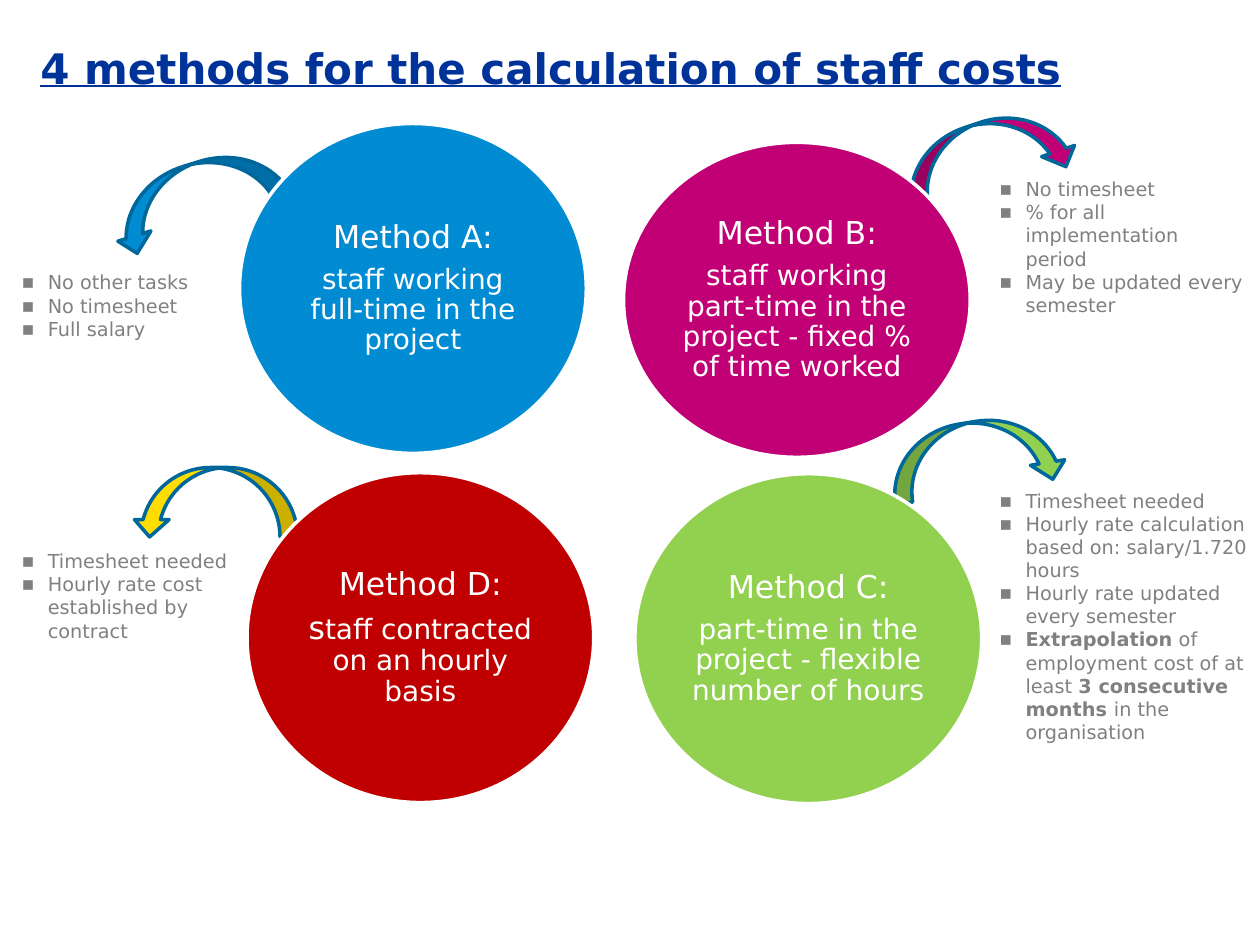
from dataclasses import dataclass

from lxml.etree import SubElement
from pptx import Presentation
from pptx.dml.color import RGBColor as Color
from pptx.enum.shapes import MSO_SHAPE as Shape
from pptx.enum.text import MSO_ANCHOR as Anchor, MSO_AUTO_SIZE as Fit, PP_ALIGN as Align
from pptx.oxml.ns import qn
from pptx.util import Cm, Pt

Box = tuple[float, float, float, float]  # left, top, width, height in cm
Run = tuple[str, bool]                   # text, bold


@dataclass(frozen=True)
class Theme:
    font: str = "DejaVu Sans"
    navy: str = "003399"
    edge: str = "00679B"
    white: str = "FFFFFF"
    grey: str = "808080"
    blue: str = "008BD2"
    pink: str = "C10076"
    green: str = "92D050"
    red: str = "C00000"
    yellow: str = "FFDD00"
    title: int = 24
    head: int = 18
    text: int = 16
    note: int = 11
    line: int = 2


@dataclass(frozen=True)
class Arrow:
    box: Box
    turn: float
    fill: str
    flip: str = ""


@dataclass(frozen=True)
class Method:
    name: str
    text: str
    fill: str
    disc: Box
    arrow: Arrow
    notes: Box
    items: list[list[Run]]
    big: int = 0  # leading letters of the text set in the heading size


T = Theme()
WIDE, TALL = 6.99, 6.65  # disc size
BAND = 1.4               # arrow width
LEFT, RIGHT = 0.18, 19.89  # note columns
INDENT = Cm(0.53)


def plain(*lines: str) -> list[list[Run]]:
    return [[(line, False)] for line in lines]


METHODS = [
    Method("Method A:", "staff working full-time in the project", T.blue,
           (4.83, 2.49, WIDE, TALL),
           Arrow((3.28, 2.16, BAND, 3.68), 72.8, T.blue),
           (LEFT, 5.33, 4.93, 1.68),
           plain("No other tasks", "No timesheet", "Full salary")),
    Method("Method B:", "staff working part-time in the project - fixed % of time worked",
           T.pink, (12.57, 2.87, WIDE, 6.35),
           Arrow((19.2, 1.37, BAND, 3.58), 251.3, T.pink, "flipH"),
           (RIGHT, 3.45, 5.46, 3.07),
           plain("No timesheet", "% for all implementation period",
                 "May be updated every semester")),
    Method("Method D:", "staff contracted on an hourly basis", T.red,
           (4.98, 9.53, WIDE, TALL),
           Arrow((3.63, 8.46, BAND, 3.33), 90, T.yellow),
           (LEFT, 10.95, 4.93, 2.13),
           plain("Timesheet needed", "Hourly rate cost established by contract"),
           big=1),
    Method("Method C:", "part-time in the project - flexible number of hours", T.green,
           (12.8, 9.55, WIDE, TALL),
           Arrow((19, 7.42, BAND, 3.56), 80.8, T.green, "flipV"),
           (RIGHT, 9.73, 5.56, 5.89),
           plain("Timesheet needed",
                 "Hourly rate calculation based on: salary/1.720 hours",
                 "Hourly rate updated every semester")
           + [[("Extrapolation", True), (" of employment cost of at least ", False),
               ("3 consecutive months ", True), ("in the organisation", False)]]),
]


def style(font, size: int, color: str, bold: bool = False) -> None:
    font.name, font.size, font.bold = T.font, Pt(size), bold
    font.color.rgb = Color.from_string(color)


def place(holder, box: Box, anchor: Anchor) -> None:
    holder.left, holder.top, holder.width, holder.height = map(Cm, box)
    frame = holder.text_frame
    frame.word_wrap, frame.auto_size = True, Fit.NONE
    frame.vertical_anchor = anchor


def add_shape(slide, kind: Shape, box: Box, fill: str, line: str):
    shape = slide.shapes.add_shape(kind, *map(Cm, box))
    shape.shadow.inherit = False
    shape.fill.solid()
    shape.fill.fore_color.rgb = Color.from_string(fill)
    shape.line.color.rgb = Color.from_string(line)
    shape.line.width = Pt(T.line)
    return shape


def add_arrow(slide, arrow: Arrow) -> None:
    shape = add_shape(slide, Shape.CURVED_RIGHT_ARROW, arrow.box, arrow.fill, T.edge)
    shape.rotation = arrow.turn
    if arrow.flip:
        shape.element.spPr.find(qn("a:xfrm")).set(arrow.flip, "1")


def add_disc(slide, method: Method) -> None:
    frame = add_shape(slide, Shape.OVAL, method.disc, method.fill, T.white).text_frame
    frame.word_wrap, frame.vertical_anchor = True, Anchor.MIDDLE
    frame.margin_left = frame.margin_right = Cm(0.08)
    frame.margin_top = frame.margin_bottom = Cm(0.08)
    head, text = frame.paragraphs[0], frame.add_paragraph()
    head.text = method.name
    if method.big:
        run = text.add_run()
        run.text, run.font.size = method.text[:method.big], Pt(T.head)
    text.add_run().text = method.text[method.big:]
    for par, size in ((head, T.head), (text, T.text)):
        par.alignment, par.line_spacing, par.space_after = Align.CENTER, 0.9, Pt(6)
        style(par.font, size, T.white)


def fill_notes(holder, method: Method) -> None:
    place(holder, method.notes, Anchor.TOP)
    frame = holder.text_frame
    for i, item in enumerate(method.items):
        par = frame.add_paragraph() if i else frame.paragraphs[0]
        par.space_before = Pt(0)
        # Square bullet with a hanging indent
        props = par._p.get_or_add_pPr()
        props.set("marL", str(INDENT))
        props.set("indent", str(-INDENT))
        SubElement(props, qn("a:buFont"), typeface=T.font)
        SubElement(props, qn("a:buChar"), char="▪")
        style(par.font, T.note, T.grey)
        for text, bold in item:
            run = par.add_run()
            run.text = text
            if bold:
                run.font.bold = True


def main() -> None:
    deck = Presentation()
    deck.slide_width, deck.slide_height = Cm(25.4), Cm(19.05)
    slide = deck.slides.add_slide(deck.slide_layouts.get_by_name("Comparison"))

    # Title
    title = slide.shapes.title
    place(title, (0.56, 0.41, 24.92, 1.9), Anchor.MIDDLE)
    par = title.text_frame.paragraphs[0]
    par.text, par.alignment = "4 methods for the calculation of staff costs", Align.LEFT
    style(par.font, T.title, T.navy, bold=True)
    par.font.underline = True

    # Arrows lie behind the discs
    for method in METHODS:
        add_arrow(slide, method.arrow)
    for method in METHODS:
        add_disc(slide, method)

    # Notes beside each disc
    holders = [h for h in slide.placeholders if h.placeholder_format.idx in range(1, 5)]
    for holder, method in zip(holders, METHODS):
        fill_notes(holder, method)

    deck.save("out.pptx")


if __name__ == "__main__":
    main()
